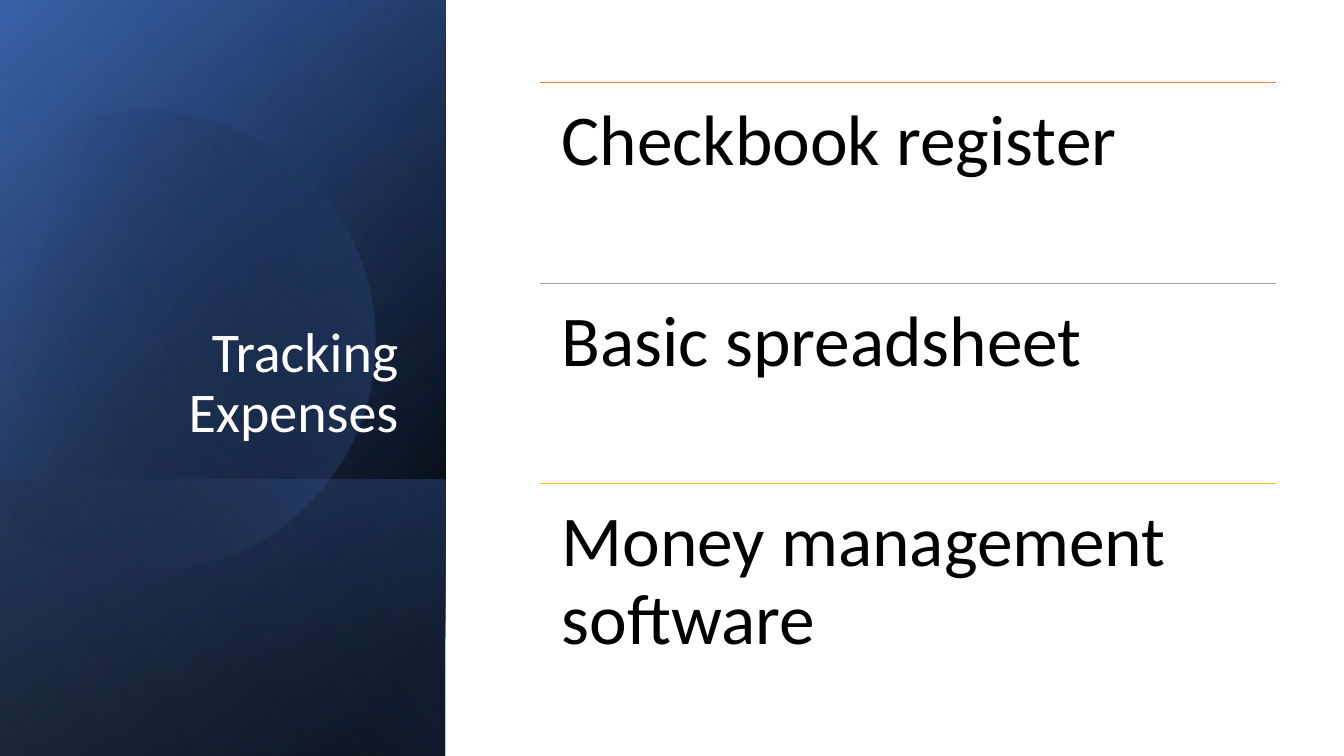
from math import cos, radians, sin

from lxml.etree import SubElement
from pptx import Presentation
from pptx.dml.color import RGBColor
from pptx.enum.shapes import MSO_CONNECTOR, MSO_SHAPE
from pptx.enum.text import MSO_ANCHOR, PP_ALIGN
from pptx.oxml.ns import qn
from pptx.util import Pt

THEME = {
    "font": "Calibri",
    "title": Pt(40),
    "body": Pt(51),
    "white": "FFFFFF",
    "black": "000000",
    "navy": "2F5597",
    "blue": "4472C4",
    "pale": "8FAADC",
    "rules": ["ED7D31", "A5A5A5", "FFC000"],
}
WIDE, HIGH = 960, 540
SIDE = 318.24  # width of the dark panel


def shade(shape, stops, angle):
    """Fill with a linear gradient of (position, colour, opacity) in percent."""
    shape.shadow.inherit = False
    shape.line.fill.background()
    fill = shape.fill
    fill.gradient()
    fill.gradient_angle = 360 - angle
    for stop, (place, color, _) in zip(fill.gradient_stops, stops):
        stop.position = place / 100
        stop.color.rgb = RGBColor.from_string(THEME[color])
    tags = shape._element.spPr.iter(qn("a:srgbClr"))
    for tag, (_, _, alpha) in zip(list(tags), stops):
        if alpha < 100:
            SubElement(tag, qn("a:alpha"), val=str(alpha * 1000))


def write(words, box, size, color, align, frame):
    text = slide.shapes.add_textbox(*map(Pt, box)).text_frame
    for name, value in frame.items():
        setattr(text, name, value)
    para = text.paragraphs[0]
    para.alignment, para.line_spacing = align, 0.9
    run = para.add_run()
    run.text = words
    for name, value in {"name": THEME["font"], "size": THEME[size]}.items():
        setattr(run.font, name, value)
    run.font.color.rgb = RGBColor.from_string(THEME[color])


deck = Presentation()
deck.slide_width, deck.slide_height = Pt(WIDE), Pt(HIGH)
slide = deck.slides.add_slide(deck.slide_layouts[6])

# Dark panel: turned, mirrored bands that reach the slide's foot, and a disc
bands = [
    (0, [(8, "black", 100), (100, "navy", 100)], 50),
    (0, [(0, "black", 0), (99, "blue", 46)], 30),
    (342.72, [(2, "blue", 29), (100, "black", 30)], 130),
    None,
    (0, [(0, "black", 0), (99, "pale", 11)], 120),
]
start = (1.49, 1.1)
curves = [
    [(2.46, 1.12), (3.35, 1.77), (3.63, 2.75)],
    [(3.98, 3.97), (3.28, 5.23), (2.07, 5.58)],
    [(1.31, 5.8), (0.53, 5.61), (-0.03, 5.14)],
    [(-0.15, 5.03)],
    [(-0.15, 1.75)],
    [(0, 1.61)],
    [(0.23, 1.42), (0.5, 1.28), (0.8, 1.19)],
    [(1.03, 1.13), (1.26, 1.1), (1.49, 1.1)],
]
STEPS = 24
TILT = 16.1
MID = (1.585, 3.345)

for band in bands:
    if band:
        top, stops, angle = band
        long = HIGH - top
        left, drop = (SIDE - long) / 2, top + (long - SIDE) / 2
        part = slide.shapes.add_shape(
            MSO_SHAPE.RECTANGLE, Pt(left), Pt(drop), Pt(long), Pt(SIDE))
        part.rotation = 90
        part._element.spPr.find(qn("a:xfrm")).set("flipH", "1")
        shade(part, stops, angle)
        continue

    points = [start]
    for curve in curves:
        if len(curve) == 1:
            points += curve
            continue
        knots = [points[-1], *curve]
        for step in range(1, STEPS + 1):
            t = step / STEPS
            weights = [(1 - t) ** 3, 3 * t * (1 - t) ** 2,
                       3 * t * t * (1 - t), t ** 3]
            points.append(tuple(
                sum(w * k[axis] for w, k in zip(weights, knots))
                for axis in (0, 1)))
    # Turn the outline upright, as the shape's own rotation tilts it back
    c, s = cos(radians(TILT)), sin(radians(TILT))
    turned = []
    for x, y in points:
        dx, dy = x - MID[0], y - MID[1]
        turned.append((Pt(72 * (MID[0] + dx * c - dy * s)),
                       Pt(72 * (MID[1] + dx * s + dy * c))))
    pen = slide.shapes.build_freeform(*turned[0], scale=1.0)
    pen.add_line_segments(turned[1:], close=True)
    disc = pen.convert_to_shape()
    disc.rotation = 360 - TILT
    shade(disc, [(29, "black", 0), (100, "blue", 43)], 30)

write("Tracking Expenses", (46.08, 132.48, 245.52, 188.64), "title", "white",
      PP_ALIGN.RIGHT,
      {"word_wrap": True, "vertical_anchor": MSO_ANCHOR.BOTTOM})

# Ruled list
LEFT, TOP, WIDTH, PITCH = 385.92, 59.04, 525.2, 143.28
INSET = Pt(15.3)
frame = {"word_wrap": True, "vertical_anchor": MSO_ANCHOR.TOP}
for edge in ("left", "right", "top", "bottom"):
    frame[f"margin_{edge}"] = INSET
items = ["Checkbook register", "Basic spreadsheet", "Money management software"]
for row, (item, color) in enumerate(zip(items, THEME["rules"])):
    y = TOP + row * PITCH
    rule = slide.shapes.add_connector(
        MSO_CONNECTOR.STRAIGHT, Pt(LEFT), Pt(y), Pt(LEFT + WIDTH), Pt(y))
    rule.line.width = Pt(0.5)
    rule.line.color.rgb = RGBColor.from_string(color)
    SubElement(rule._element.spPr, qn("a:effectLst"))
    write(item, (LEFT, y, WIDTH, PITCH), "body", "black",
          PP_ALIGN.LEFT, frame)

deck.save("out.pptx")
